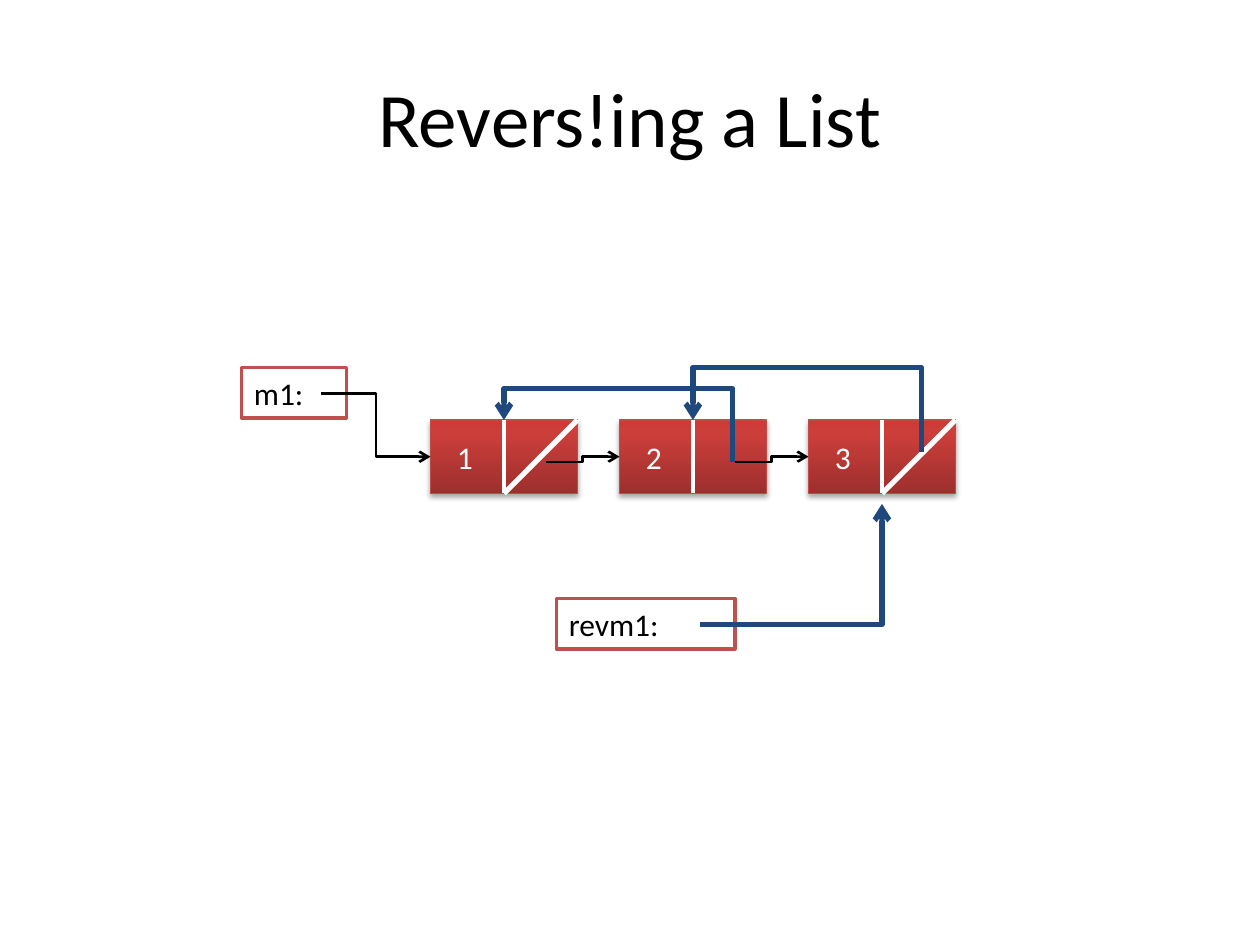
from copy import deepcopy
from typing import NamedTuple

from lxml.etree import SubElement
from pptx import Presentation
from pptx.dml.color import RGBColor
from pptx.enum.shapes import MSO_CONNECTOR, MSO_SHAPE
from pptx.enum.text import MSO_ANCHOR, MSO_AUTO_SIZE, PP_ALIGN
from pptx.oxml.ns import qn
from pptx.util import Inches, Pt

CELL = 1 / 12
NODE_TOP, NODE_WIDTH, NODE_HEIGHT = 40, 14, 7
NODE_MIDDLE = NODE_TOP + NODE_HEIGHT / 2
NODE_BOTTOM = NODE_TOP + NODE_HEIGHT
LINK_ROW = 44
BLACK, WHITE, BLUE, RED = "000000", "FFFFFF", "1F497D", "C0504D"


class Node(NamedTuple):
    """A list cell: its value and its left column."""
    value: str
    column: float

    @property
    def center(self) -> float:
        """Return the column of the divider."""
        return self.column + NODE_WIDTH / 2


class Label(NamedTuple):
    """A variable name in a frame."""
    text: str
    column: float
    row: float
    columns: float


class Arrow(NamedTuple):
    """A bent arrow; adjust holds the shares at which it turns."""
    start: tuple
    end: tuple
    color: str
    width: float
    preset: str = "bentConnector3"
    adjust: tuple = (0.5,)


FIRST, SECOND, THIRD = NODES = [Node(str(i + 1), 41 + 18 * i) for i in range(3)]


def grid(cells: float) -> int:
    """Turn grid cells into a length."""
    return Inches(cells * CELL)


def rgb(color: str) -> RGBColor:
    """Turn a hex string into a colour."""
    return RGBColor.from_string(color)


def write(shape, text: str, *, size=18, color=BLACK, align=PP_ALIGN.LEFT,
          anchor=MSO_ANCHOR.TOP) -> None:
    """Put one formatted paragraph into a shape."""
    frame = shape.text_frame
    frame.word_wrap = True
    frame.vertical_anchor = anchor
    para = frame.paragraphs[0]
    para.alignment = align
    span = para.add_run()
    span.text = text
    span.font.size, span.font.name = Pt(size), "Calibri"
    span.font.color.rgb = rgb(color)


def add_box(page, column, row, columns, rows, *, line: str, width: float):
    """Add a rectangle on the grid, without a shadow."""
    box = page.shapes.add_shape(MSO_SHAPE.RECTANGLE, grid(column), grid(row),
                                grid(columns), grid(rows))
    box.shadow.inherit = False
    box.line.color.rgb, box.line.width = rgb(line), Pt(width)
    return box


def add_label(page, label: Label) -> None:
    """Add a framed variable name."""
    box = add_box(page, label.column, label.row, label.columns, 4.8, line=RED, width=2)
    box.fill.solid()
    box.fill.fore_color.rgb = rgb(WHITE)
    write(box, label.text)
    box.text_frame.auto_size = MSO_AUTO_SIZE.SHAPE_TO_FIT_TEXT


def shade(box) -> None:
    """Give a box the red gradient and a soft shadow below."""
    box.fill.gradient()
    box.fill.gradient_angle = 90
    stop_list = box._element.spPr.find(qn("a:gradFill")).find(qn("a:gsLst"))
    stop_list.append(deepcopy(stop_list[-1]))
    ramp = ((0, "9C2F2D"), (0.8, "CB3E3A"), (1, "CE3B37"))
    for stop, (position, color) in zip(box.fill.gradient_stops, ramp):
        stop.position, stop.color.rgb = position, rgb(color)
    shadow = SubElement(box._element.spPr.find(qn("a:effectLst")), qn("a:outerShdw"),
                        blurRad=str(Pt(3.1)), dist=str(Pt(1.8)), dir="5400000", rotWithShape="0")
    color = SubElement(shadow, qn("a:srgbClr"), val=BLACK)
    SubElement(color, qn("a:alpha"), val="35000")


def add_node(page, node: Node):
    """Add a list cell with its value."""
    box = add_box(page, node.column, NODE_TOP, NODE_WIDTH, NODE_HEIGHT,
                  line="BF4C48", width=0.75)
    shade(box)
    write(box, node.value, color=WHITE, anchor=MSO_ANCHOR.MIDDLE)
    box.text_frame.margin_left = Inches(0.21)
    return box


def add_line(page, start, end, *, color=WHITE, width=3.0, kind=MSO_CONNECTOR.STRAIGHT):
    """Add a connector between two grid points."""
    line = page.shapes.add_connector(kind, *map(grid, (*start, *end)))
    line.line.color.rgb, line.line.width = rgb(color), Pt(width)
    SubElement(line._element.spPr, qn("a:effectLst"))
    return line


def add_divider(page, node: Node, box) -> None:
    """Split a list cell from top to bottom."""
    line = add_line(page, (node.center, NODE_TOP), (node.center, NODE_BOTTOM), width=2.25)
    line.begin_connect(box, 0)
    line.end_connect(box, 2)


def add_slash(page, node: Node) -> None:
    """Mark a list cell as the end of a list."""
    add_line(page, (node.column + NODE_WIDTH, NODE_TOP), (node.center, NODE_BOTTOM))


def add_arrow(page, arrow: Arrow) -> None:
    """Add a bent arrow with its turns."""
    line = add_line(page, arrow.start, arrow.end, color=arrow.color, width=arrow.width,
                    kind=MSO_CONNECTOR.ELBOW)
    geometry = line._element.spPr.find(qn("a:prstGeom"))
    geometry.set("prst", arrow.preset)
    guides = geometry.find(qn("a:avLst"))
    for number, share in enumerate(arrow.adjust, 1):
        name = f"adj{number}" if len(arrow.adjust) > 1 or arrow.preset != "bentConnector2" else "adj"
        SubElement(guides, qn("a:gd"), name=name, fmla=f"val {round(share * 100000)}")
    SubElement(line.line._get_or_add_ln(), qn("a:tailEnd"), type="arrow")


def back_arrow(start: tuple, target: Node, peak: float) -> Arrow:
    """Describe an arrow that rises to a peak row and drops onto a node."""
    rise = (start[1] - peak) / (start[1] - NODE_TOP)
    return Arrow(start, (target.center, NODE_TOP), BLUE, 3, "bentConnector4", (0, rise))


def next_arrow(source: Node, target: Node) -> Arrow:
    """Describe the arrow from one list cell to the next."""
    return Arrow((source.column + 11, LINK_ROW), (target.column, NODE_MIDDLE), BLACK, 1.5)


def main() -> None:
    """Build the slide and save it."""
    deck = Presentation()
    deck.slide_width, deck.slide_height = Inches(10), Inches(7.5)
    page = deck.slides.add_slide(deck.slide_layouts[5])
    title = page.shapes.title
    title.left, title.top, title.width, title.height = map(grid, (6, 3.6, 108, 15))
    write(title, "Revers!ing a List", size=44, align=PP_ALIGN.CENTER, anchor=MSO_ANCHOR.MIDDLE)

    boxes = [add_node(page, node) for node in NODES]
    add_label(page, Label("m1:", 23, 35, 10))
    add_arrow(page, Arrow((30.6, 37.5), (FIRST.column, NODE_MIDDLE), BLACK, 1.5))
    for node, box in zip(NODES, boxes):
        add_divider(page, node, box)
    for source, target in zip(NODES, NODES[1:]):
        add_arrow(page, next_arrow(source, target))
    add_slash(page, THIRD)
    add_label(page, Label("revm1:", 53, 57, 17))
    add_arrow(page, Arrow((66.7, 59.5), (THIRD.center, 48), BLUE, 3, "bentConnector2", ()))
    add_arrow(page, back_arrow((87.75, 43.1), SECOND, 35))
    add_arrow(page, back_arrow((69.8, LINK_ROW), FIRST, 37))
    add_slash(page, FIRST)
    deck.save("out.pptx")


if __name__ == "__main__":
    main()
